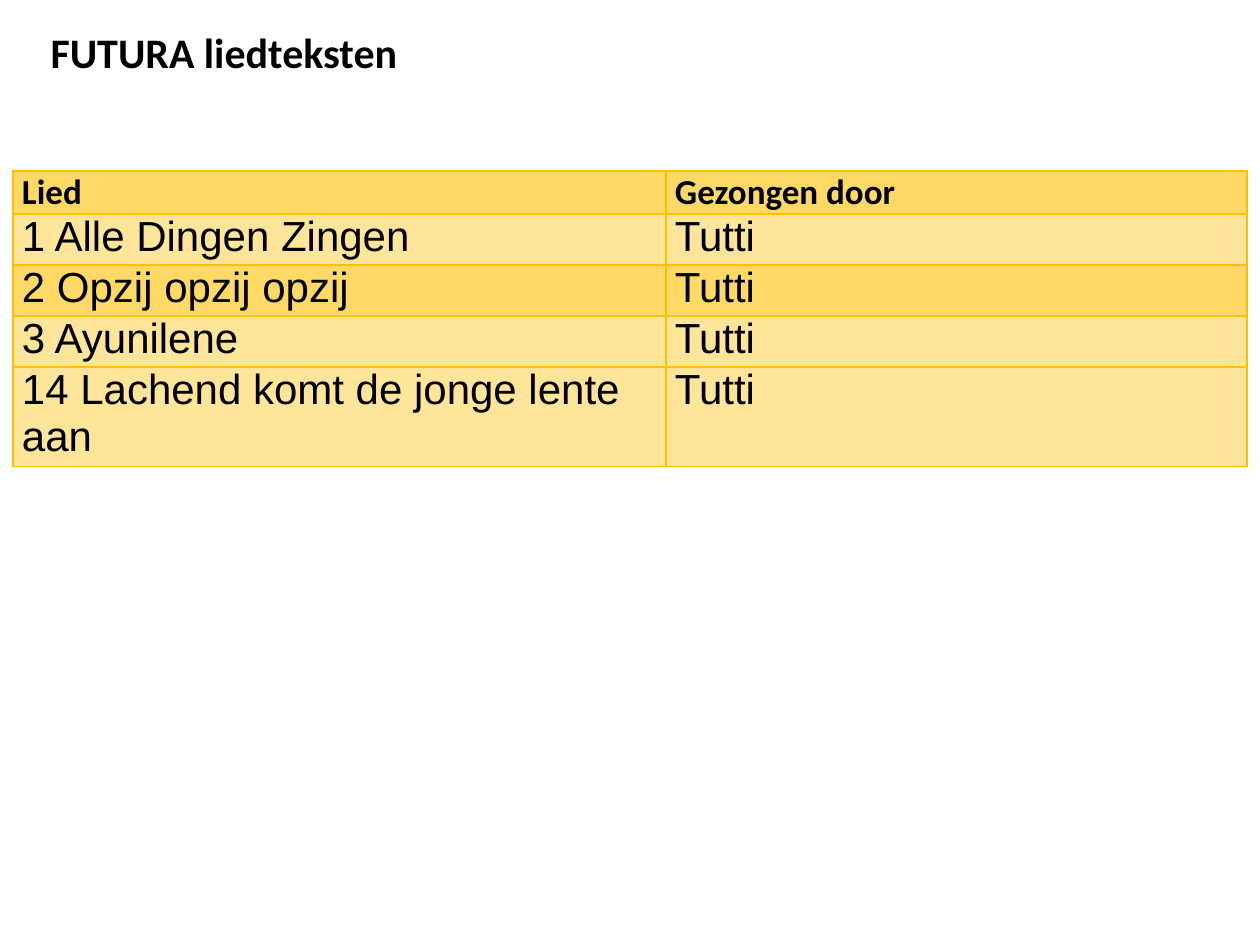
from lxml import etree
from pptx import Presentation
from pptx.dml.color import RGBColor
from pptx.enum.text import MSO_ANCHOR, PP_ALIGN
from pptx.oxml.ns import qn
from pptx.util import Emu, Pt

TOP, MIDDLE = MSO_ANCHOR.TOP, MSO_ANCHOR.MIDDLE
LEFT = PP_ALIGN.LEFT

TITLE = "FUTURA liedteksten"
HEADER = ("Lied", "Gezongen door")
SONGS = [
    ("1 Alle Dingen Zingen", "Tutti"),
    ("2 Opzij opzij opzij", "Tutti"),
    ("3 Ayunilene", "Tutti"),
    ("14 Lachend komt de jonge lente aan", "Tutti"),
]
ROW_FILLS = ["FFD966", "FEE599", "FFD966", "FEE599", "FEE599"]
BORDER = "FFC000"
BLACK = "000000"

COL_WIDTHS = [653, 581]
ROW_HEIGHTS = [43, 51, 51, 51, 100]
TABLE_LEFT, TABLE_TOP = 13, 171
TITLE_BOX = (38, 20, 376, 64)


def px(n):
    return Emu(round(n * 914400 / 126))


def rgb(value):
    return RGBColor.from_string(value)


def style(p, font, size, bold):
    p.alignment = LEFT
    p.font.name = font
    p.font.size = Pt(size)
    p.font.bold = bold
    p.font.color.rgb = rgb(BLACK)


def add_borders(cell):
    """Draw all four cell edges; call before the cell's fill is set."""
    tc_pr = cell._tc.get_or_add_tcPr()
    for edge in ("a:lnL", "a:lnR", "a:lnT", "a:lnB"):
        ln = etree.SubElement(tc_pr, qn(edge), w=str(Pt(0.75)))
        fill = etree.SubElement(ln, qn("a:solidFill"))
        etree.SubElement(fill, qn("a:srgbClr"), val=BORDER)


def add_title(s):
    title = s.shapes.title
    title.left, title.top, title.width, title.height = map(px, TITLE_BOX)
    tf = title.text_frame
    tf.text = TITLE
    tf.word_wrap = False
    tf.vertical_anchor = MIDDLE
    style(tf.paragraphs[0], "Calibri", 24, True)


def add_song_table(s):
    rows = [HEADER] + SONGS
    table = s.shapes.add_table(
        len(rows), len(HEADER), px(TABLE_LEFT), px(TABLE_TOP),
        px(sum(COL_WIDTHS)), px(sum(ROW_HEIGHTS))).table
    for column, width in zip(table.columns, COL_WIDTHS):
        column.width = px(width)
    for r, texts in enumerate(rows):
        table.rows[r].height = px(ROW_HEIGHTS[r])
        for c, text in enumerate(texts):
            cell = table.cell(r, c)
            cell.text = text
            cell.margin_left = cell.margin_right = px(9)
            cell.margin_top = cell.margin_bottom = 0
            cell.vertical_anchor = TOP
            add_borders(cell)
            cell.fill.solid()
            cell.fill.fore_color.rgb = rgb(ROW_FILLS[r])
            font = ("Calibri", 20, True) if r == 0 else ("Arial", 24, False)
            style(cell.text_frame.paragraphs[0], *font)


def main():
    prs = Presentation()
    prs.slide_width, prs.slide_height = px(1260), px(945)
    s = prs.slides.add_slide(prs.slide_layouts[5])
    add_title(s)
    add_song_table(s)
    prs.save("out.pptx")


if __name__ == "__main__":
    main()
